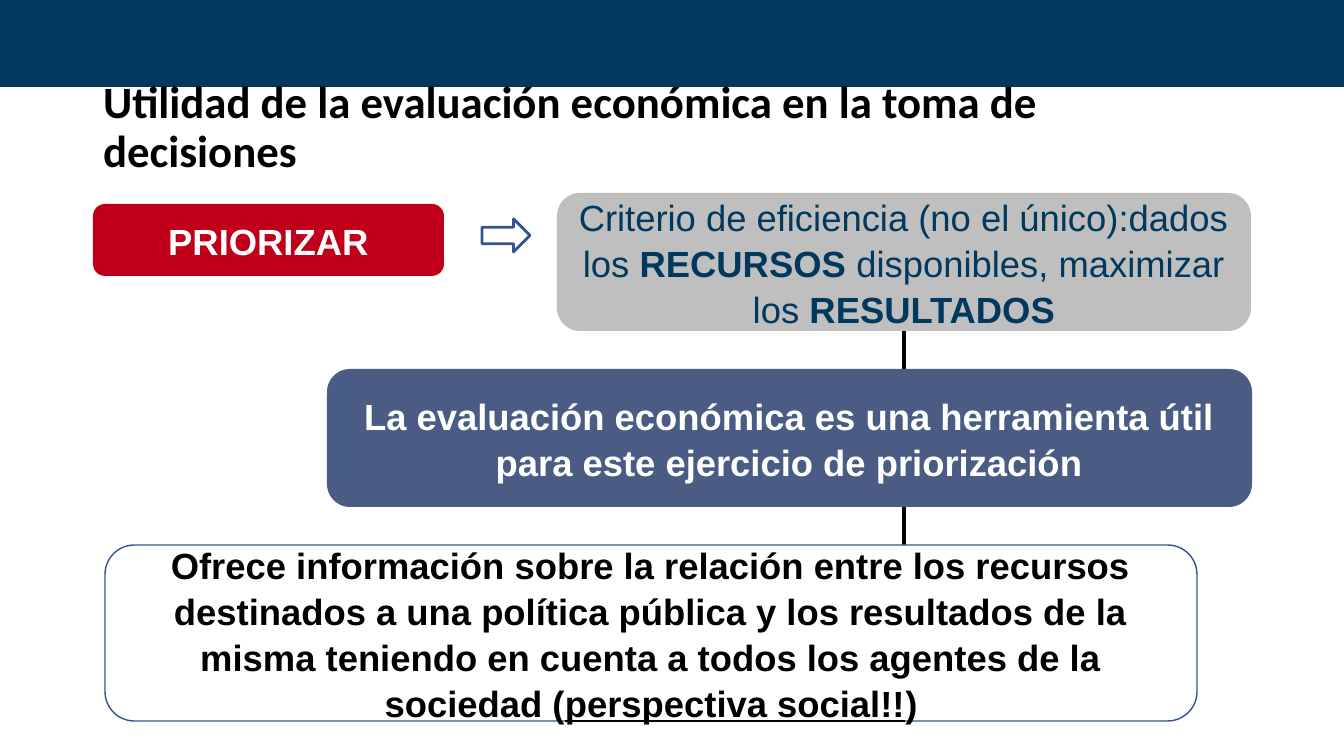
from lxml import etree
from pptx import Presentation
from pptx.dml.color import RGBColor
from pptx.enum.shapes import MSO_CONNECTOR, MSO_SHAPE
from pptx.enum.text import MSO_ANCHOR, PP_ALIGN
from pptx.oxml.ns import qn
from pptx.util import Pt

RECT = MSO_SHAPE.RECTANGLE
ROUNDED = MSO_SHAPE.ROUNDED_RECTANGLE
ARROW = MSO_SHAPE.RIGHT_ARROW
STRAIGHT = MSO_CONNECTOR.STRAIGHT
MIDDLE = MSO_ANCHOR.MIDDLE
LEFT, CENTER = PP_ALIGN.LEFT, PP_ALIGN.CENTER

NAVY = RGBColor(0x00, 0x39, 0x5D)
RED = RGBColor(0xC0, 0x00, 0x1B)
GREY = RGBColor(0xBF, 0xBF, 0xBF)
SLATE = RGBColor(0x4A, 0x5C, 0x83)
BLUE = RGBColor(0x32, 0x54, 0x91)
WHITE = RGBColor(0xFF, 0xFF, 0xFF)
BLACK = RGBColor(0x00, 0x00, 0x00)

EMU_PER_PX = 914400 / 100.8
SLIDE_SIZE = (1344, 756)
BOTTOM = 2

TITLE = "Utilidad de la evaluación económica en la toma de decisiones"
TITLE_AREA = (93, 75, 1159, 107)
BAND_AREA = (0, 0, 1344, 86)
ARROW_AREA = (482, 219, 48, 33)
LINK_END_Y = 684

# Runs are (text, bold, underlined)
BOXES = {
    "priorizar": dict(
        area=(93, 204, 351, 72), fill=RED, line=None, color=WHITE,
        runs=[("PRIORIZAR", True, False)]),
    "criterio": dict(
        area=(557, 193, 694, 138), fill=GREY, line=None, color=NAVY,
        runs=[("Criterio de eficiencia (no el único):dados los ", False, False),
              ("RECURSOS", True, False),
              (" disponibles, maximizar los ", False, False),
              ("RESULTADOS", True, False)]),
    "informacion": dict(
        area=(105, 545, 1092, 176), fill=WHITE, line=BLUE, color=BLACK,
        runs=[("Ofrece información sobre la relación entre los recursos "
               "destinados a una política pública y los resultados de la "
               "misma teniendo en cuenta a todos los agentes de la "
               "sociedad (", True, False),
              ("perspectiva social!!", True, True),
              (")", True, False)]),
    "herramienta": dict(
        area=(327, 369, 925, 138), fill=SLATE, line=None, color=WHITE,
        runs=[("La evaluación económica es una herramienta útil para este "
               "ejercicio de priorización", True, False)]),
}


def px(length):
    return round(length * EMU_PER_PX)


def add_filled_shape(slide, kind, area, fill, line, line_width=1):
    shape = slide.shapes.add_shape(kind, *map(px, area))
    shape.shadow.inherit = False
    if fill is None:
        shape.fill.background()
    else:
        shape.fill.solid()
        shape.fill.fore_color.rgb = fill
    if line is None:
        shape.line.fill.background()
    else:
        shape.line.color.rgb = line
        shape.line.width = Pt(line_width)
    return shape


def write(frame, runs, font_name, size, color, align, spacing):
    frame.word_wrap = True
    frame.vertical_anchor = MIDDLE
    paragraph = frame.paragraphs[0]
    paragraph.alignment = align
    paragraph.line_spacing = spacing
    for text, bold, underlined in runs:
        run = paragraph.add_run()
        run.text = text
        font = run.font
        font.name, font.size, font.bold = font_name, Pt(size), bold
        font.underline = underlined
        font.color.rgb = color


def main():
    deck = Presentation()
    deck.slide_width, deck.slide_height = map(px, SLIDE_SIZE)
    slide = deck.slides.add_slide(deck.slide_layouts[5])

    title = slide.shapes.title
    title.left, title.top, title.width, title.height = map(px, TITLE_AREA)
    write(title.text_frame, [(TITLE, True, False)], "Calibri", 32, BLACK, LEFT, 0.9)
    title.text_frame.margin_right = px(20)

    band = add_filled_shape(slide, RECT, BAND_AREA, NAVY, NAVY)
    title._element.addprevious(band._element)

    # The link is drawn before the boxes so that they cover it
    left, top, width, height = BOXES["criterio"]["area"]
    link_x = px(left + width / 2)
    link = slide.shapes.add_connector(
        STRAIGHT, link_x, px(top + height), link_x, px(LINK_END_Y))
    link.line.color.rgb = BLACK
    link.line.width = Pt(3)
    etree.SubElement(link._element.spPr, qn("a:effectLst"))

    boxes = {}
    for key, box in BOXES.items():
        boxes[key] = add_filled_shape(slide, ROUNDED, box["area"], box["fill"], box["line"])
        write(boxes[key].text_frame, box["runs"], "Arial", 26, box["color"], CENTER, 1.05)
    link.begin_connect(boxes["criterio"], BOTTOM)

    add_filled_shape(slide, ARROW, ARROW_AREA, None, BLUE, 2)
    deck.save("out.pptx")


if __name__ == "__main__":
    main()
